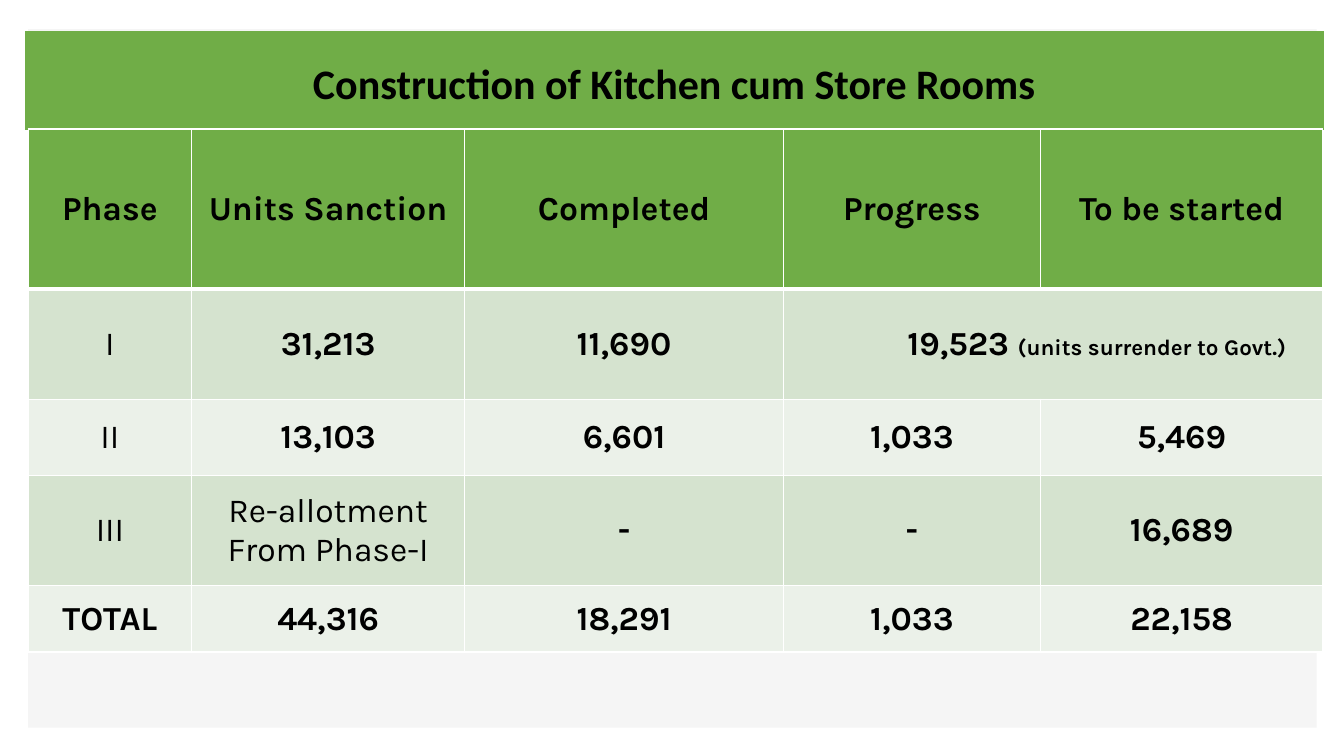
from lxml import etree
from pptx import Presentation
from pptx.dml.color import RGBColor
from pptx.enum.shapes import MSO_SHAPE
from pptx.enum.text import MSO_ANCHOR, MSO_AUTO_SIZE, PP_ALIGN
from pptx.oxml.ns import qn
from pptx.util import Inches, Pt

RECTANGLE = MSO_SHAPE.RECTANGLE
MIDDLE = MSO_ANCHOR.MIDDLE
CENTER, LEFT = PP_ALIGN.CENTER, PP_ALIGN.LEFT
NO_AUTOFIT = MSO_AUTO_SIZE.NONE

HEADING = "Construction of Kitchen cum Store Rooms"
SURRENDERED = ("19,523 ", "(units surrender to Govt.)")
ROWS = [
    ("Phase", "Units Sanction", "Completed", "Progress", "To be started"),
    ("I", "31,213", "11,690", SURRENDERED, None),
    ("II", "13,103", "6,601", "1,033", "5,469"),
    ("III", "Re-allotment\nFrom Phase-I", "-", "-", "16,689"),
    ("TOTAL", "44,316", "18,291", "1,033", "22,158"),
]
REGULAR = {"I", "II", "III", "Re-allotment\nFrom Phase-I"}
COLUMN_WIDTHS = [1.62, 2.71, 3.16, 2.55, 2.8]
ROW_HEIGHTS = [1.59, 1.09, 0.76, 1.09, 0.66]
COLORS = {"header": "70AD47", "odd": "D5E3CF", "even": "EBF1E9",
          "panel": "F5F5F5", "text": "000000", "rule": "FFFFFF"}
CELL_FORMAT = {"vertical_anchor": MIDDLE,
               "margin_left": Inches(0.13), "margin_right": Inches(0.13),
               "margin_top": Inches(0.05), "margin_bottom": Inches(0.05)}
HEADING_FORMAT = {"vertical_anchor": MIDDLE, "word_wrap": True,
                  "auto_size": NO_AUTOFIT,
                  "margin_left": 0, "margin_right": 0,
                  "margin_top": Inches(0.05), "margin_bottom": 0}
SURRENDER_INDENT = 1.23


def apply(target, formats):
    for attribute, value in formats.items():
        setattr(target, attribute, value)


def paint(target, color):
    target.fill.solid()
    target.fill.fore_color.rgb = RGBColor.from_string(COLORS[color])


def write(paragraph, text, size, face, bold=True):
    run = paragraph.add_run()
    run.text = text
    apply(run.font, {"size": Pt(size), "name": face, "bold": bold})
    run.font.color.rgb = RGBColor.from_string(COLORS["text"])


def add_borders(cell, row):
    properties = cell._tc.get_or_add_tcPr()
    widths = {"lnL": 1, "lnR": 1, "lnT": 3 if row == 1 else 1,
              "lnB": 3 if row == 0 else 1}
    for side, width in widths.items():
        border = etree.SubElement(properties, qn("a:" + side), w=str(Pt(width)))
        fill = etree.SubElement(border, qn("a:solidFill"))
        etree.SubElement(fill, qn("a:srgbClr"), val=COLORS["rule"])


def fill_cell(cell, content):
    frame = cell.text_frame
    if isinstance(content, tuple):
        cell.margin_left = Inches(SURRENDER_INDENT)
        paragraph = frame.paragraphs[0]
        paragraph.alignment = LEFT
        for text, size in zip(content, (24, 16)):
            write(paragraph, text, size, "Karla")
        return
    for index, line in enumerate(content.split("\n")):
        paragraph = frame.add_paragraph() if index else frame.paragraphs[0]
        paragraph.alignment = CENTER
        write(paragraph, line, 24, "Karla", content not in REGULAR)


def add_heading(slide):
    heading = slide.shapes.title
    apply(heading, {"left": Inches(0.25), "top": Inches(0.31),
                    "width": Inches(12.88), "height": Inches(0.98)})
    paint(heading, "header")
    apply(heading.text_frame, HEADING_FORMAT)
    paragraph = heading.text_frame.paragraphs[0]
    paragraph.alignment = CENTER
    write(paragraph, HEADING, 30, "Calibri")


def add_panel(slide):
    panel = slide.shapes.add_shape(
        RECTANGLE, Inches(0.28), Inches(0.29), Inches(12.78), Inches(6.93))
    panel.shadow.inherit = False
    paint(panel, "panel")
    panel.line.fill.background()
    slide.shapes.title._element.addprevious(panel._element)


def add_phases(slide):
    phases = slide.shapes.add_table(
        len(ROWS), len(COLUMN_WIDTHS), Inches(0.28), Inches(1.28),
        Inches(sum(COLUMN_WIDTHS)), Inches(sum(ROW_HEIGHTS))).table
    for column, width in zip(phases.columns, COLUMN_WIDTHS):
        column.width = Inches(width)
    for row, height in zip(phases.rows, ROW_HEIGHTS):
        row.height = Inches(height)
    for r, contents in enumerate(ROWS):
        band = "header" if r == 0 else "odd" if r % 2 else "even"
        for c, content in enumerate(contents):
            cell = phases.cell(r, c)
            apply(cell, CELL_FORMAT)
            add_borders(cell, r)
            paint(cell, band)
            if content is None:
                phases.cell(r, c - 1).merge(cell)
            else:
                fill_cell(cell, content)


def main():
    deck = Presentation()
    deck.slide_width, deck.slide_height = Inches(13.33), Inches(7.5)
    slide = deck.slides.add_slide(deck.slide_layouts[5])
    add_heading(slide)
    add_panel(slide)
    add_phases(slide)
    deck.save("out.pptx")


if __name__ == "__main__":
    main()
